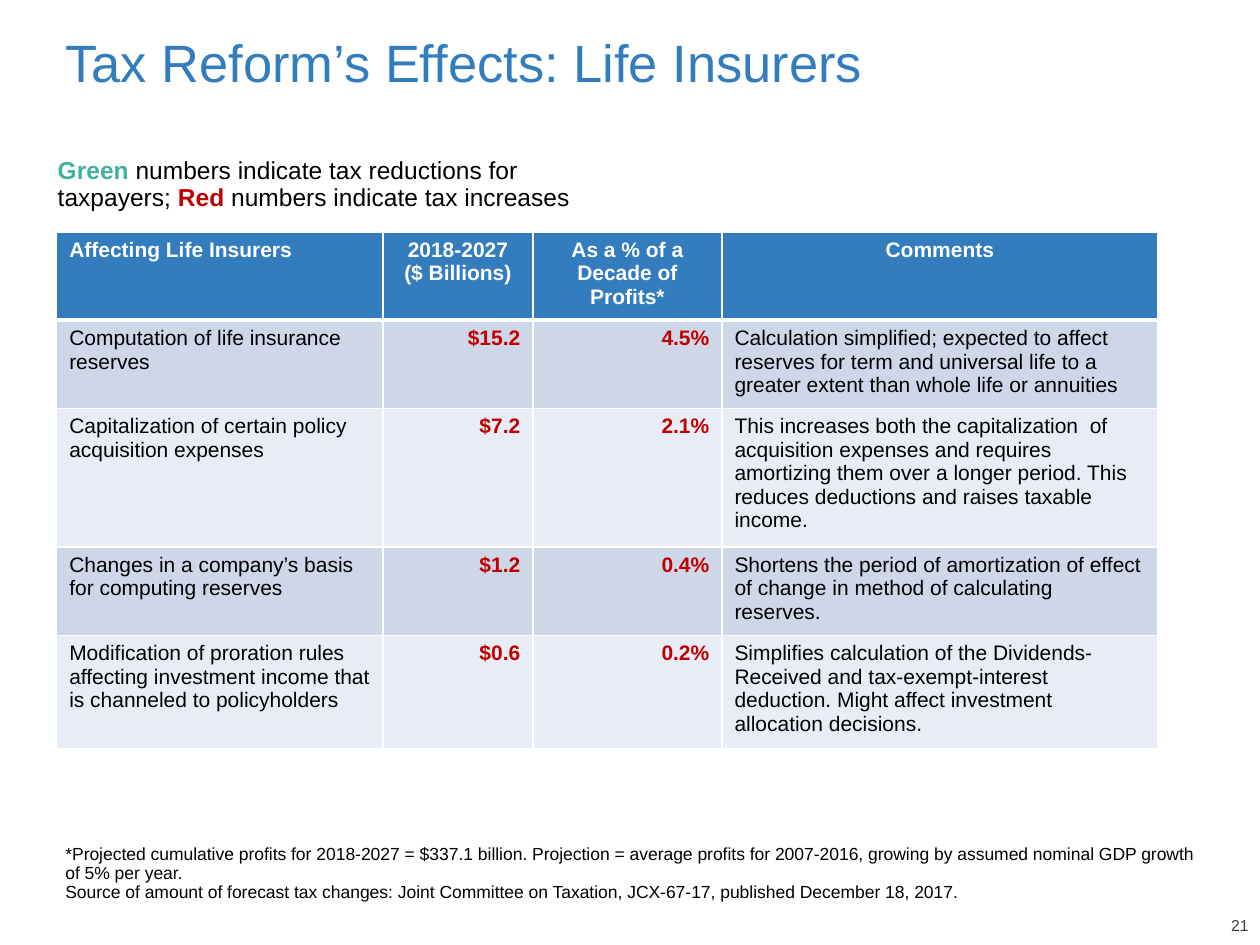
import pptx
import pptx.dml.color
import pptx.enum.text
import pptx.oxml
import pptx.oxml.ns
import pptx.util

Inches, Pt = pptx.util.Inches, pptx.util.Pt
ALIGN = pptx.enum.text.PP_ALIGN
ANCHOR = pptx.enum.text.MSO_ANCHOR

BLUE, GREEN, RED = "337DBE", "43B19E", "C00000"
BLACK, WHITE, GRAY = "000000", "FFFFFF", "404040"
BANDS = ["CED7E8", "E8ECF4"]

# Content: each run is (text, colour, bold)
TITLE = [("Tax Reform’s Effects: Life Insurers", BLUE, False)]
COLOUR_KEY = [
    ("Green", GREEN, True),
    (" numbers indicate tax reductions for taxpayers; ", BLACK, False),
    ("Red", RED, True),
    (" numbers indicate tax increases", BLACK, False),
]
FOOTNOTE = [
    ("*Projected cumulative profits for 2018-2027 = $337.1 billion. Projection = average profits "
     "for 2007-2016, growing by assumed nominal GDP growth of 5% per year.", BLACK, False),
    ("Source of amount of forecast tax changes: Joint Committee on Taxation, JCX-67-17, "
     "published December 18, 2017.", BLACK, False),
]
PAGE_NUMBER = [("21", GRAY, False)]

HEADINGS = ["Affecting Life Insurers", "2018-2027 ($ Billions)",
            "As a % of a Decade of Profits*", "Comments"]
PROVISIONS = [
    ("Computation of life insurance reserves", "$15.2", "4.5%",
     "Calculation simplified; expected to affect reserves for term and universal life "
     "to a greater extent than whole life or annuities"),
    ("Capitalization of certain policy acquisition expenses", "$7.2", "2.1%",
     "This increases both the capitalization  of acquisition expenses and requires amortizing "
     "them over a longer period. This reduces deductions and raises taxable income."),
    ("Changes in a company’s basis for computing reserves", "$1.2", "0.4%",
     "Shortens the period of amortization of effect of change in method of calculating reserves."),
    ("Modification of proration rules affecting investment income that is channeled to "
     "policyholders", "$0.6", "0.2%",
     "Simplifies calculation of the Dividends-Received and tax-exempt-interest deduction. "
     "Might affect investment allocation decisions."),
]
COLUMN_WIDTHS = [2.59, 1.19, 1.5, 3.46]
ROW_HEIGHT = 0.41  # minimum; rows grow with their text
HEADING_ALIGN = [ALIGN.LEFT, ALIGN.CENTER, ALIGN.CENTER, ALIGN.CENTER]
BODY_ALIGN = [ALIGN.LEFT, ALIGN.RIGHT, ALIGN.RIGHT, ALIGN.LEFT]


def rgb(value):
    return pptx.dml.color.RGBColor.from_string(value)


def add_run(paragraph, text, colour, bold, size):
    run = paragraph.add_run()
    run.text = text
    run.font.color.rgb = rgb(colour)
    for name, value in {"name": "Arial", "size": Pt(size), "bold": bold}.items():
        setattr(run.font, name, value)


def add_text(slide, box, runs, size, broken=False, align=ALIGN.LEFT, **frame_format):
    frame = slide.shapes.add_textbox(*map(Inches, box)).text_frame
    frame.word_wrap = True
    for name, value in frame_format.items():
        setattr(frame, name, value)
    paragraph = frame.paragraphs[0]
    paragraph.alignment = align
    paragraph.line_spacing = 0.9
    for index, run in enumerate(runs):
        if broken and index:
            paragraph.add_line_break()
        add_run(paragraph, *run, size)


def set_borders(cell, widths):
    properties = cell._tc.get_or_add_tcPr()
    for index, (side, width) in enumerate(widths.items()):
        properties.insert(index, pptx.oxml.parse_xml(
            f'<a:ln{side} {pptx.oxml.ns.nsdecls("a")} w="{Pt(width)}"><a:solidFill>'
            f'<a:srgbClr val="{WHITE}"/></a:solidFill></a:ln{side}>'))


def add_tax_table(slide):
    rows = [HEADINGS] + PROVISIONS
    table = slide.shapes.add_table(
        len(rows), len(HEADINGS), Inches(0.45), Inches(1.84),
        Inches(sum(COLUMN_WIDTHS)), Inches(ROW_HEIGHT * len(rows))).table
    for column, width in zip(table.columns, COLUMN_WIDTHS):
        column.width = Inches(width)
    for r, row in enumerate(rows):
        heading = r == 0
        for c, text in enumerate(row):
            cell = table.cell(r, c)
            cell.fill.solid()
            cell.fill.fore_color.rgb = rgb(BLUE if heading else BANDS[(r - 1) % 2])
            # A heavier rule separates the headings from the body
            set_borders(cell, {"L": 1, "R": 1, "T": 3 if r == 1 else 1, "B": 3 if heading else 1})
            figure = c in (1, 2)
            colour = WHITE if heading else RED if figure else BLACK
            paragraph = cell.text_frame.paragraphs[0]
            paragraph.alignment = (HEADING_ALIGN if heading else BODY_ALIGN)[c]
            add_run(paragraph, text, colour, heading or figure, 12)


def main():
    deck = pptx.Presentation()
    deck.slide_width, deck.slide_height = Inches(10), Inches(7.5)
    slide = deck.slides.add_slide(deck.slide_layouts[6])

    # Page number
    add_text(slide, (9.43, 7.29, 0.48, 0.13), PAGE_NUMBER, 9, align=ALIGN.RIGHT,
             vertical_anchor=ANCHOR.BOTTOM, margin_left=0, margin_right=0,
             margin_top=0, margin_bottom=0)
    # Title and footnote
    add_text(slide, (0.42, 0.25, 9.25, 0.64), TITLE, 30)
    add_text(slide, (0.42, 6.46, 9.25, 0.87), FOOTNOTE, 10, broken=True,
             vertical_anchor=ANCHOR.BOTTOM, margin_top=0, margin_bottom=Inches(0.17))
    # Table and its colour key
    add_tax_table(slide)
    add_text(slide, (0.36, 1.21, 4.79, 0.61), COLOUR_KEY, 14)

    deck.save("out.pptx")


if __name__ == "__main__":
    main()
